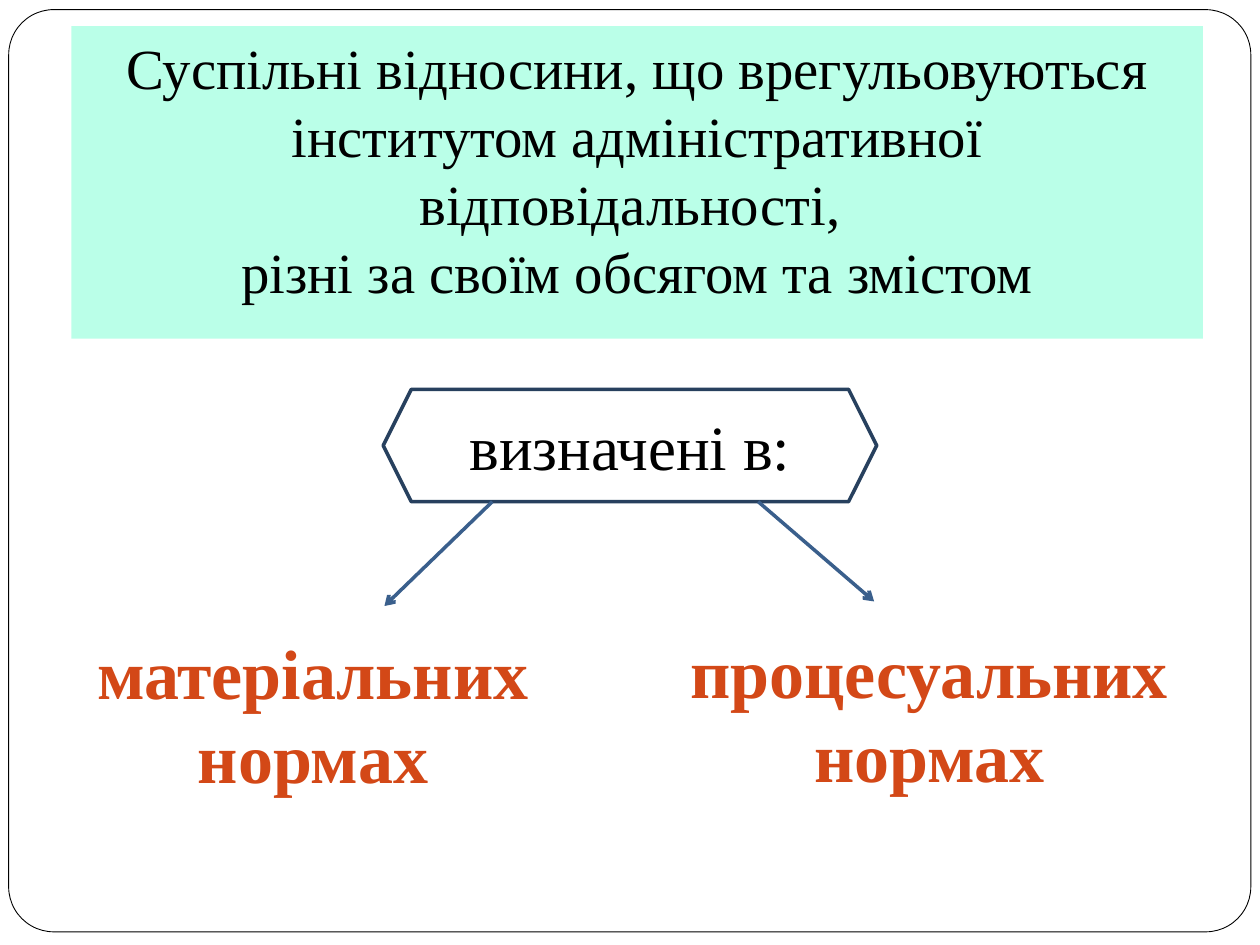
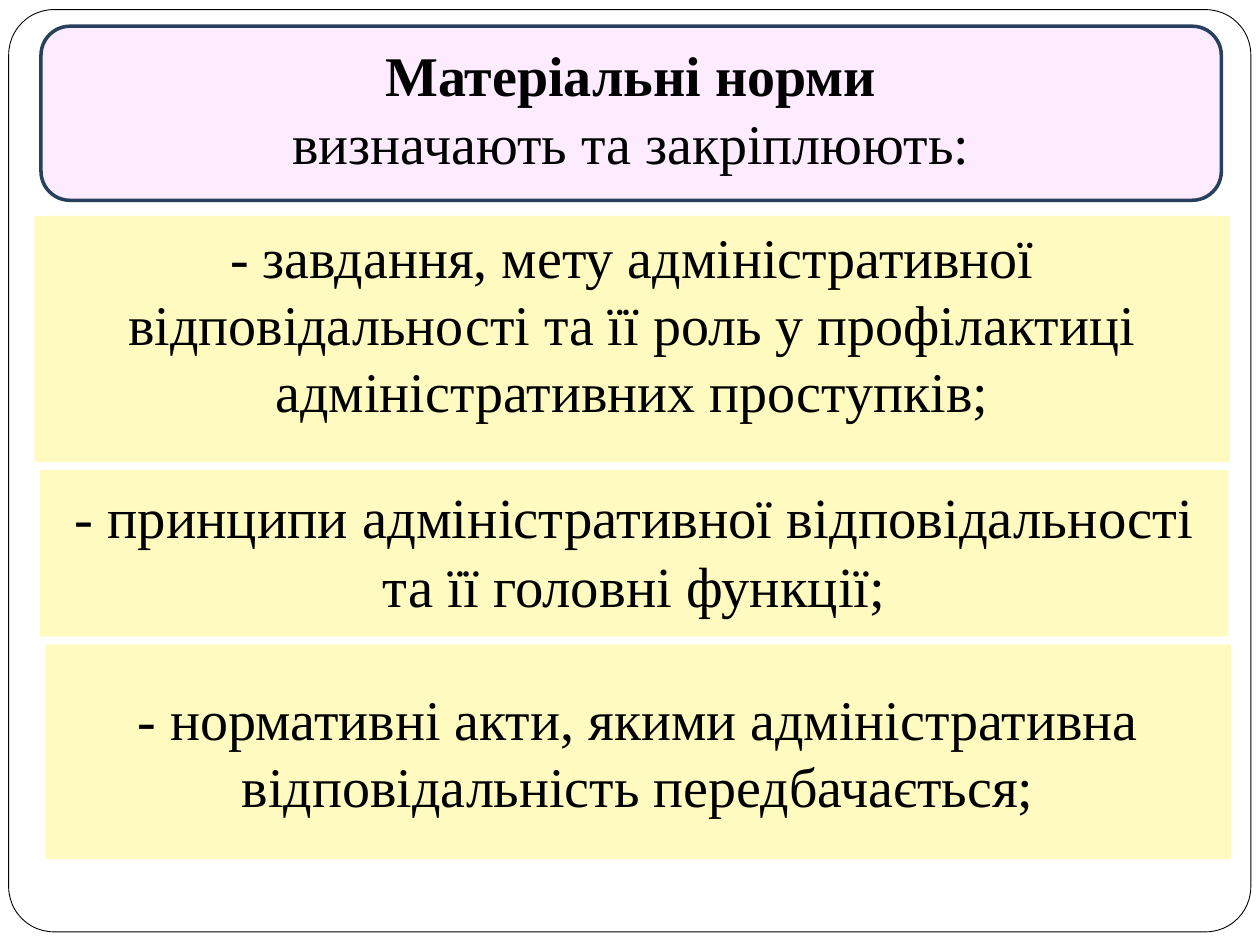
from lxml import etree
from pptx import Presentation
from pptx import util as u
from pptx.dml.color import RGBColor
from pptx.enum import shapes, text
from pptx.oxml.ns import qn

FONT = "Times New Roman"
BLACK, WHITE, ACCENT = "000000", "FFFFFF", "D34817"
MINT, CREAM, PINK = "BAFFE8", "FFFAC0", "FDEBFF"
OUTLINE, ARROW = "27405E", "3A5F8C"
TOP, MIDDLE = text.MSO_ANCHOR.TOP, text.MSO_ANCHOR.MIDDLE


def rgb(value):
    """Return the colour for a hex string."""
    return RGBColor.from_string(value)


def place(sp, box):
    """Move a shape to a box given in points."""
    sp.left, sp.top, sp.width, sp.height = [u.Pt(v) for v in box]


def write(sp, lines, size, color=BLACK, bold=(), anchor=TOP, before=0):
    """Write centred lines; bold holds the indexes of the bold ones."""
    tf = sp.text_frame
    tf.text = "\n".join(lines)
    tf.word_wrap = True
    tf.auto_size = text.MSO_AUTO_SIZE.NONE
    tf.vertical_anchor = anchor
    for i, p in enumerate(tf.paragraphs):
        p.alignment = text.PP_ALIGN.CENTER
        p.space_before = u.Pt(before)
        for r in p.runs:
            r.font.name, r.font.size = FONT, u.Pt(size)
            r.font.bold = i in bold
            r.font.color.rgb = rgb(color)


def fill_title(slide, box, lines, fill, anchor):
    """Place the title as a coloured band."""
    sp = slide.shapes.title
    place(sp, box)
    sp.fill.solid()
    sp.fill.fore_color.rgb = rgb(fill)
    write(sp, lines, 32.4, anchor=anchor)
    sp.text_frame.margin_bottom = u.Pt(7.2)


def fill_body(slide, idx, box, line, size, fill=None, **style):
    """Place a body placeholder without bullets, on a fill if one is given."""
    sp = slide.placeholders[idx]
    place(sp, box)
    if fill:
        sp.fill.solid()
        sp.fill.fore_color.rgb = rgb(fill)
    write(sp, [line], size, before=5.8, **style)
    for p in sp.text_frame.paragraphs:
        pPr = p._p.get_or_add_pPr()
        pPr.set("marL", "0")
        pPr.set("indent", "0")
        etree.SubElement(pPr, qn("a:buNone"))


def add_box(slide, kind, box, fill=WHITE, line=OUTLINE, weight=2):
    """Add an outlined preset shape."""
    sp = slide.shapes.add_shape(kind, *[u.Pt(v) for v in box])
    sp.shadow.inherit = False
    sp.fill.solid()
    sp.fill.fore_color.rgb = rgb(fill)
    sp.line.color.rgb = rgb(line)
    sp.line.width = u.Pt(weight)
    return sp


def add_arrow(slide, start, end):
    """Add a straight arrow between two points."""
    cx = slide.shapes.add_connector(
        shapes.MSO_CONNECTOR.STRAIGHT, *[u.Pt(v) for v in start + end])
    cx.line.color.rgb = rgb(ARROW)
    cx.line.width = u.Pt(2)
    ln = cx.line._get_or_add_ln()
    etree.SubElement(ln, qn("a:tailEnd")).set("type", "arrow")
    etree.SubElement(cx._element.spPr, qn("a:effectLst"))


def add_page_frame(slide, box):
    """Draw the rounded page frame behind everything else."""
    sp = add_box(slide, shapes.MSO_SHAPE.ROUNDED_RECTANGLE, box, WHITE, BLACK, 0.5)
    sp.adjustments[0] = 0.049
    slide.shapes.element.insert(2, sp.element)


def add_branches(slide, box):
    """Draw the hexagon and the arrows that lead down from it."""
    x, y, w, h = box
    sp = add_box(slide, shapes.MSO_SHAPE.HEXAGON, box)
    write(sp, ["визначені в:"], 36, anchor=MIDDLE)
    add_arrow(slide, (x + 214.3, y + h), (x + 280.5, y + h + 57))
    add_arrow(slide, (x + 62.3, y + h), (x + 0.7, y + h + 59.6))


def build_relations(slide):
    """Fill the slide on the relations and the two kinds of norms."""
    fill_title(slide, (40.8, 14.9, 646.6, 178.6), [
        "Суспільні відносини, що врегульовуються інститутом "
        "адміністративної відповідальності, ",
        "різні за своїм обсягом та змістом"], MINT, TOP)
    norms = [((44.1, 337.5, 269.5, 141), "матеріальних нормах"),
             ((384.1, 335.5, 293.8, 143.5), "процесуальних нормах")]
    for idx, (box, line) in enumerate(norms, 1):
        fill_body(slide, idx, box, line, 40, color=ACCENT, bold=(0,), anchor=MIDDLE)
    add_branches(slide, (219, 222.5, 282, 64.2))


def build_material_norms(slide):
    """Fill the slide on what the material norms define."""
    fill_title(slide, (23, 268.7, 679, 95.2), [
        "- принципи адміністративної відповідальності та її головні функції;"],
        CREAM, MIDDLE)
    fill_body(slide, 1, (19.7, 123.3, 683.3, 140.8),
              "- завдання, мету адміністративної відповідальності та її роль "
              "у профілактиці адміністративних проступків;", 32, CREAM)
    fill_body(slide, 2, (26, 368.4, 677.6, 122.4),
              "- нормативні акти, якими адміністративна відповідальність "
              "передбачається;", 32, CREAM, anchor=MIDDLE)
    sp = add_box(slide, shapes.MSO_SHAPE.ROUNDED_RECTANGLE,
                 (23.4, 15, 674.5, 99.5), PINK)
    write(sp, ["Матеріальні норми", "визначають та закріплюють:"], 32, bold=(0,))


def main():
    """Build and save the presentation."""
    prs = Presentation()
    prs.slide_width, prs.slide_height = u.Pt(720), u.Pt(540)
    layout = prs.slide_layouts.get_by_name("Two Content")
    for build in (build_relations, build_material_norms):
        slide = prs.slides.add_slide(layout)
        add_page_frame(slide, (5, 5.5, 709.8, 527))
        build(slide)
    prs.save("out.pptx")


if __name__ == "__main__":
    main()
